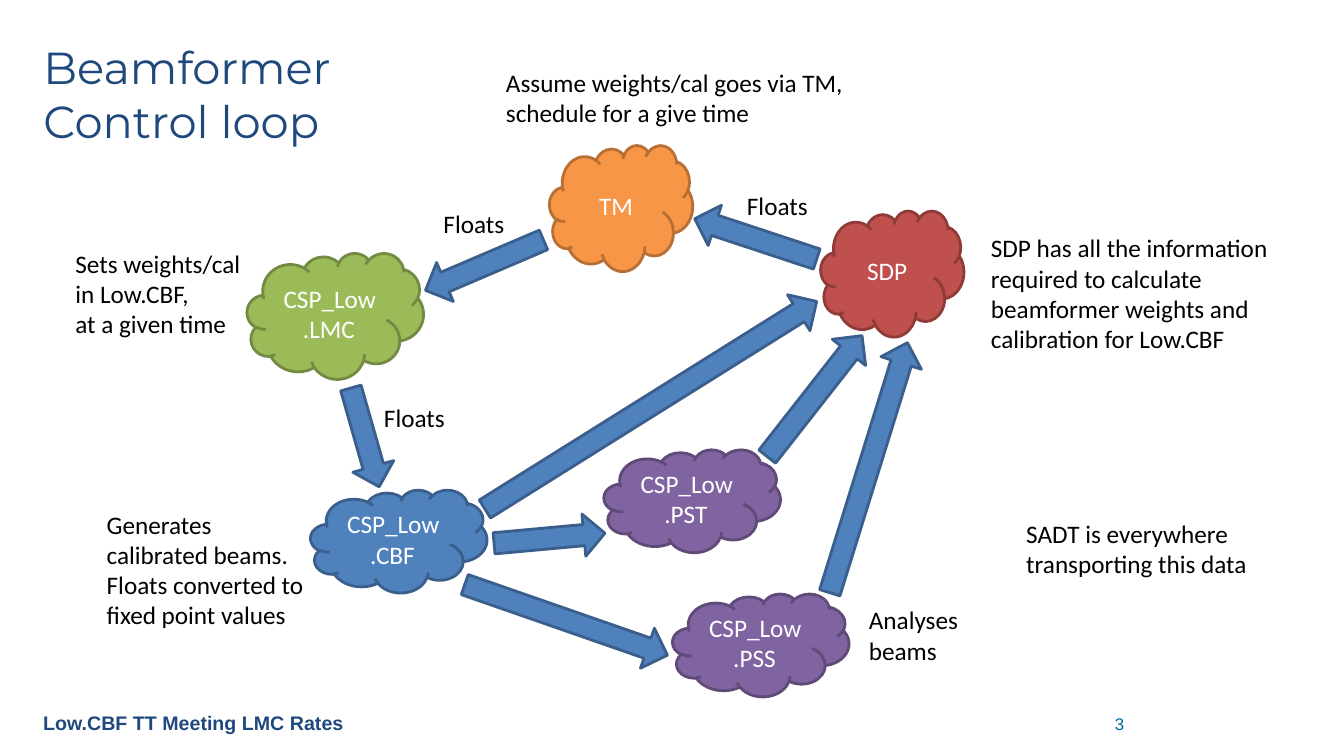
import math

import pptx
import pptx.dml.color
import pptx.enum.shapes
import pptx.enum.text
import pptx.util

COLS, ROWS = 13.33, 7.5
UNIT = pptx.util.Inches(1)

THEME = {
    "title": {"size": 32, "font": "Montserrat", "color": "1F497D"},
    "footer": {"size": 14, "font": "Arial", "color": "1F497D", "bold": True},
    "number": {"size": 12, "font": "Arial", "color": "006699", "align": "CENTER"},
    "note": {"size": 18, "font": "Calibri", "color": "000000"},
    "cloud": {"size": 18, "font": "Calibri", "color": "FFFFFF", "align": "CENTER"},
    "orange": ("F79646", "B76F34"),
    "red": ("C0504D", "8E3B39"),
    "green": ("9BBB59", "738A42"),
    "blue": ("4F81BD", "3A5F8C"),
    "purple": ("8064A2", "5F4A78"),
    "outline": 2,
}

TITLE = ("Beamformer \vControl loop", (0.33, 0.3, 12.67, 1.25))
SMALL, WIDE, TALL = (1.42, 1.25), (1.75, 1.02), (1.75, 1.25)
CLOUDS = [
    ("CSP_Low.PST", "purple", (5.99, 4.46), WIDE),
    ("SDP", "red", (8.14, 2.09), SMALL),
    ("TM", "orange", (5.45, 1.44), SMALL),
    ("CSP_Low.CBF", "blue", (3.08, 4.86), WIDE),
    ("CSP_Low.PSS", "purple", (6.67, 5.89), WIDE),
    ("CSP_Low.LMC", "green", (2.45, 2.51), TALL),
]
ARROW_HEIGHT = 0.42
ARROWS = [
    ((8.1, 2.57), (6.89, 2.17)),
    ((4.81, 5.05), (8.1, 2.99)),
    ((7.61, 4.53), (8.55, 3.33)),
    ((8.23, 5.88), (9, 3.4)),
    ((5.39, 2.38), (4.22, 2.88)),
    ((3.48, 3.85), (3.76, 4.83)),
    ((4.61, 5.8), (6.62, 6.5)),
    ((4.9, 5.39), (6, 5.29)),
]
NOTES = [
    ("SDP has all the information required to calculate beamformer weights "
     "and calibration for Low.CBF", (9.73, 2.26, 3.35, 1.31)),
    ("Assume weights/cal goes via TM, schedule for a give time", (4.92, 0.62, 3.58, 0.71)),
    ("Sets weights/cal in Low.CBF, \vat a given time", (0.65, 2.41, 1.97, 1.01)),
    ("SADT is everywhere transporting this data", (10.08, 5.09, 2.45, 0.71)),
    ("Generates calibrated beams. Floats converted to fixed point values",
     (0.96, 5, 2.25, 1.31)),
    ("Analyses beams", (8.52, 5.95, 1.27, 0.71)),
]
FLOATS = [(7.31, 1.84), (4.3, 2.02), (3.71, 3.94)]
FLOATS_SIZE = (0.81, 0.4)
FOOTER = ("Low.CBF TT Meeting LMC Rates", (0.33, 7, 6.33, 0.34))
NUMBER = ("3", (10.44, 7.03, 1.33, 0.3))


def grid(*cells):
    return [round(cell * UNIT) for cell in cells]


def rgb(color):
    return pptx.dml.color.RGBColor.from_string(color)


def write(sp, text, size, font, color, bold=False, align="LEFT", anchor="TOP", wrap=True):
    tf = sp.text_frame
    tf.word_wrap = wrap
    tf.vertical_anchor = pptx.enum.text.MSO_ANCHOR[anchor]
    p = tf.paragraphs[0]
    p.text = text
    p.alignment = pptx.enum.text.PP_ALIGN[align]
    for r in p.runs:
        r.font.size = pptx.util.Pt(size)
        r.font.name = font
        r.font.bold = bold
        r.font.color.rgb = rgb(color)


def add_text(s, text, box, style, wrap=True):
    sp = s.shapes.add_textbox(*grid(*box))
    write(sp, text, wrap=wrap, **THEME[style])
    sp.text_frame.auto_size = pptx.enum.text.MSO_AUTO_SIZE.SHAPE_TO_FIT_TEXT


def add_figure(s, kind, box, palette):
    sp = s.shapes.add_shape(pptx.enum.shapes.MSO_SHAPE[kind], *grid(*box))
    fill, line = THEME[palette]
    sp.shadow.inherit = False
    sp.fill.solid()
    sp.fill.fore_color.rgb = rgb(fill)
    sp.line.color.rgb = rgb(line)
    sp.line.width = pptx.util.Pt(THEME["outline"])
    return sp


def add_arrow(s, tail, tip):
    length = math.dist(tail, tip)
    left = (tail[0] + tip[0] - length) / 2
    top = (tail[1] + tip[1] - ARROW_HEIGHT) / 2
    sp = add_figure(s, "RIGHT_ARROW", (left, top, length, ARROW_HEIGHT), "blue")
    sp.rotation = math.degrees(math.atan2(tip[1] - tail[1], tip[0] - tail[0])) % 360


def main():
    prs = pptx.Presentation()
    prs.slide_width, prs.slide_height = grid(COLS, ROWS)
    s = prs.slides.add_slide(prs.slide_layouts[5])

    add_text(s, *FOOTER, "footer")
    add_text(s, *NUMBER, "number")

    text, box = TITLE
    title = s.shapes.title
    title.left, title.top, title.width, title.height = grid(*box)
    write(title, text, anchor="MIDDLE", **THEME["title"])

    for text, palette, corner, size in CLOUDS:
        sp = add_figure(s, "CLOUD", corner + size, palette)
        write(sp, text, anchor="MIDDLE", **THEME["cloud"])
    for tail, tip in ARROWS:
        add_arrow(s, tail, tip)
    for text, box in NOTES:
        add_text(s, text, box, "note")
    for corner in FLOATS:
        add_text(s, "Floats", corner + FLOATS_SIZE, "note", wrap=False)

    prs.save("out.pptx")


if __name__ == "__main__":
    main()
